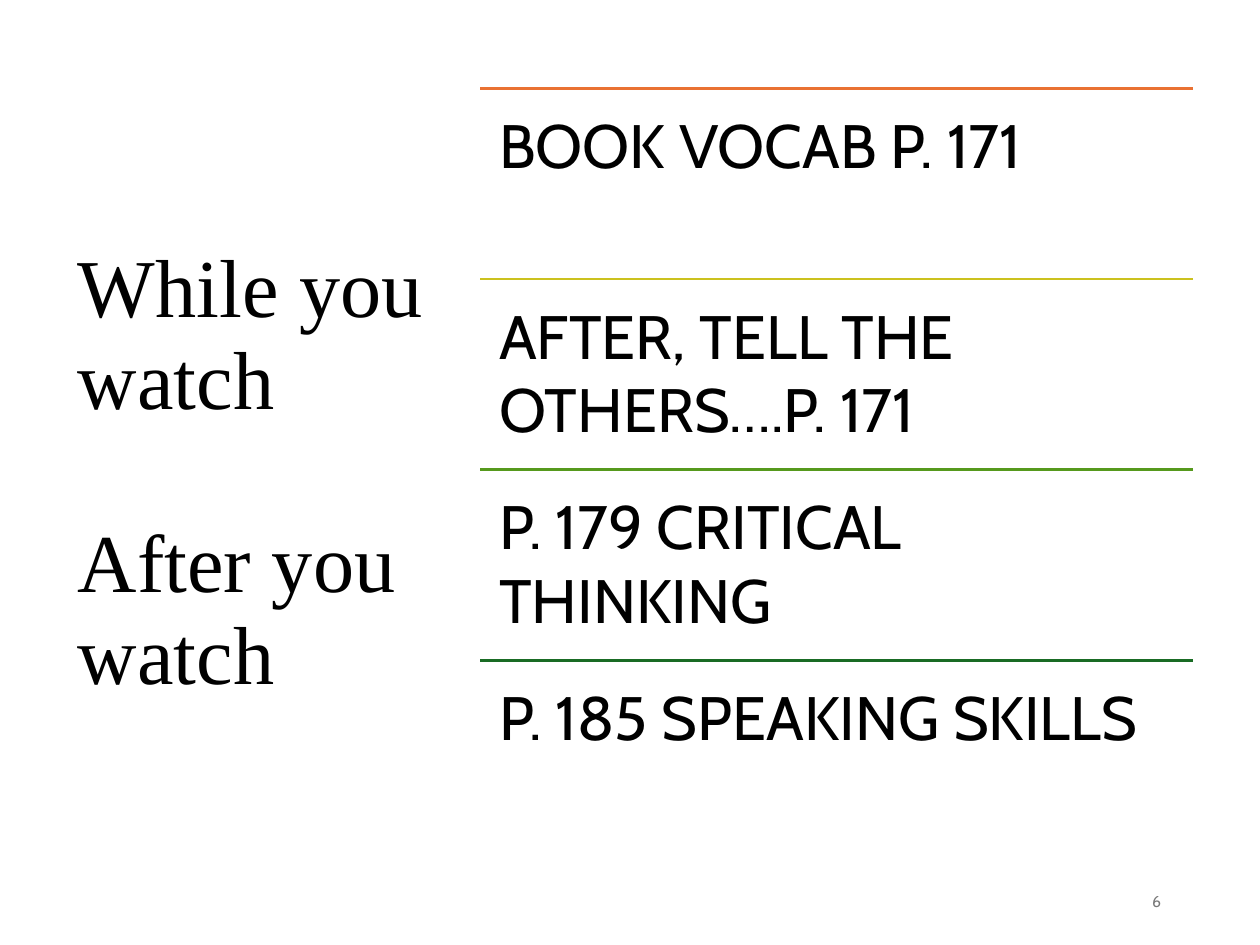
from dataclasses import dataclass

from lxml.etree import SubElement
from pptx import Presentation
from pptx.dml.color import RGBColor
from pptx.enum.shapes import MSO_CONNECTOR
from pptx.enum.text import MSO_ANCHOR, PP_ALIGN
from pptx.oxml.ns import qn
from pptx.util import Pt


@dataclass(frozen=True)
class Theme:
    heading_font: str = "Times New Roman"
    body_font: str = "Cabin"
    heading_size: float = 47
    body_size: float = 35
    number_size: float = 9
    text: str = "000000"
    muted: str = "797979"
    rules: tuple = ("E97132", "CBC11E", "56991D", "196B24")


THEME = Theme()
HEADINGS = ["While you watch", "After you watch"]
TASKS = [
    "BOOK VOCAB P. 171",
    "AFTER, TELL THE OTHERS….P. 171",
    "P. 179 CRITICAL THINKING",
    "P. 185 SPEAKING SKILLS",
]

# Task list geometry, in points
LIST_LEFT, LIST_TOP, LIST_WIDTH, ROW_HEIGHT = 274.5, 50.4, 407.5, 109
TASK_INSET = 10.8


def add_text(page, left, top, width, height, lines, font, size, color,
             anchor=MSO_ANCHOR.TOP, inset=None):
    """Add a wrapping text box and return its paragraphs."""
    box = page.shapes.add_textbox(Pt(left), Pt(top), Pt(width), Pt(height))
    frame = box.text_frame
    frame.word_wrap = True
    frame.vertical_anchor = anchor
    if inset is not None:
        frame.margin_left = frame.margin_right = Pt(inset)
        frame.margin_top = frame.margin_bottom = Pt(inset)
    frame.text = "\n".join(lines)
    for para in frame.paragraphs:
        for span in para.runs:
            span.font.name = font
            span.font.size = Pt(size)
            span.font.color.rgb = RGBColor.from_string(color)
    return frame.paragraphs


def add_rule(page, left, top, width, color):
    """Add a horizontal rule without a shadow."""
    rule = page.shapes.add_connector(
        MSO_CONNECTOR.STRAIGHT, Pt(left), Pt(top), Pt(left + width), Pt(top))
    rule.line.color.rgb = RGBColor.from_string(color)
    rule.line.width = Pt(1.5)
    SubElement(rule._element.spPr, qn("a:effectLst"))


def add_headings(page):
    paras = add_text(page, 37.5, 50.4, 249, 440, HEADINGS, THEME.heading_font,
                     THEME.heading_size, THEME.text, MSO_ANCHOR.MIDDLE)
    for para in paras:
        para.line_spacing = 0.94
    paras[1].space_before = Pt(51)


def add_task(page, index, task, color):
    top = LIST_TOP + index * ROW_HEIGHT
    add_rule(page, LIST_LEFT, top, LIST_WIDTH, color)
    add_text(page, LIST_LEFT, top, LIST_WIDTH, ROW_HEIGHT, [task],
             THEME.body_font, THEME.body_size, THEME.text, inset=TASK_INSET)


def add_page_number(page, number):
    paras = add_text(page, 508.5, 500.5, 162, 28.75, [str(number)],
                     THEME.body_font, THEME.number_size, THEME.muted,
                     MSO_ANCHOR.MIDDLE)
    paras[0].alignment = PP_ALIGN.RIGHT


def main():
    deck = Presentation()
    deck.slide_width, deck.slide_height = Pt(720), Pt(540)
    page = deck.slides.add_slide(deck.slide_layouts[6])

    # Headings on the left
    add_headings(page)

    # Ruled task list on the right
    for index, (task, color) in enumerate(zip(TASKS, THEME.rules)):
        add_task(page, index, task, color)

    # Footer
    add_page_number(page, 6)

    deck.save("out.pptx")


if __name__ == "__main__":
    main()
